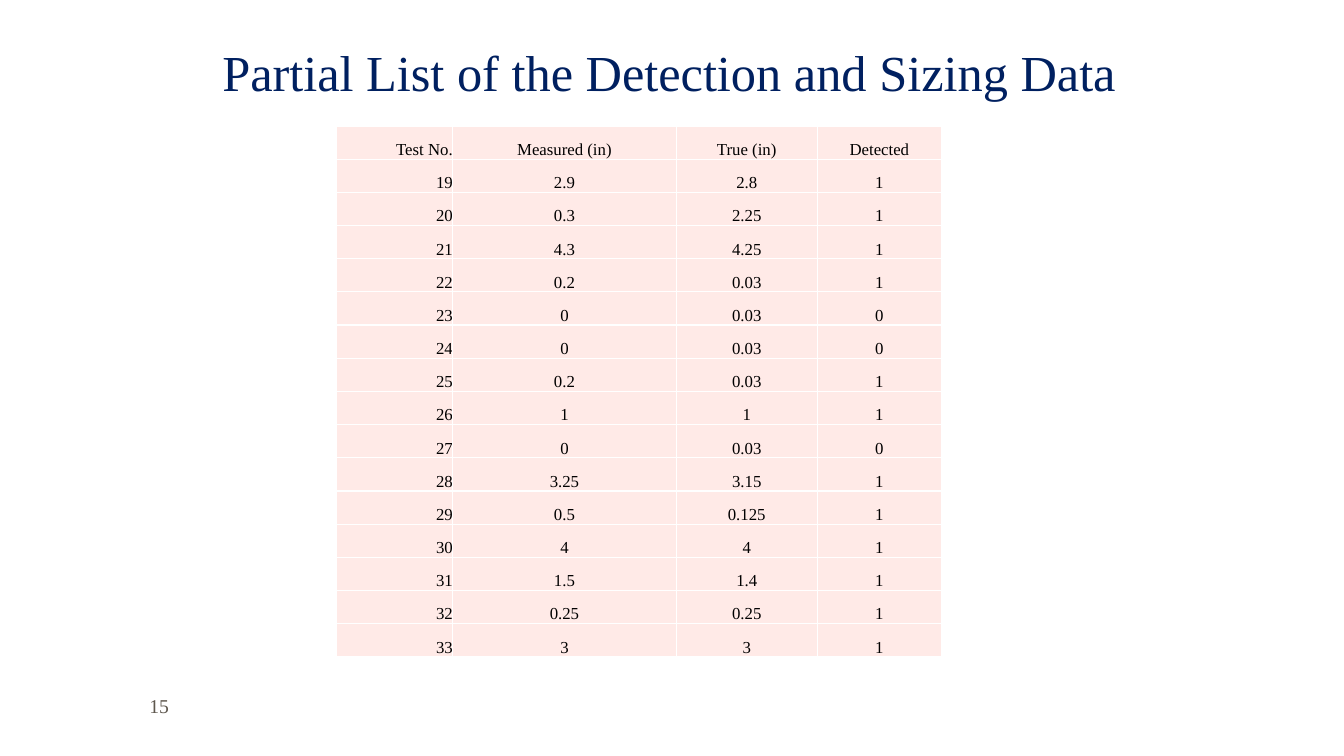
from dataclasses import dataclass

from lxml.etree import SubElement
from pptx import Presentation
from pptx.dml.color import RGBColor
from pptx.enum.text import MSO_ANCHOR as Anchor, PP_ALIGN as Align
from pptx.oxml.ns import qn
from pptx.util import Inches, Length, Pt


@dataclass(frozen=True)
class Theme:
    font: str = "Times New Roman"
    title_size: int = 36
    number_size: int = 14
    cell_size: int = 12
    title_color: str = "002060"
    number_color: str = "5E574E"
    cell_color: str = "000000"
    cell_fill: str = "FFEAE7"
    border_color: str = "FFFFFF"
    border_width: int = 1


@dataclass(frozen=True)
class Label:
    text: str
    left: float
    top: float
    width: float
    height: float
    size: int
    color: str
    align: Align
    anchor: Anchor
    margin_top: float = 0.6


@dataclass(frozen=True)
class Column:
    heading: str
    width: float
    align: Align
    values: tuple


THEME = Theme()
GRID_COLUMNS, GRID_ROWS = 160, 90
TABLE_LEFT, TABLE_TOP, ROW_HEIGHT = 40, 15, 3.95

LABELS = (
    Label("15", 8, 80, 13.3, 6, THEME.number_size, THEME.number_color,
          Align.RIGHT, Anchor.BOTTOM),
    Label("Partial List of the Detection and Sizing Data", 7.7, 3.6, 144, 11.4,
          THEME.title_size, THEME.title_color, Align.CENTER, Anchor.TOP, 1.3),
)

COLUMNS = (
    Column("Test No.", 13.9, Align.RIGHT, tuple(range(19, 34))),
    Column("Measured (in)", 26.6, Align.CENTER,
           (2.9, 0.3, 4.3, 0.2, 0, 0, 0.2, 1, 0, 3.25, 0.5, 4, 1.5, 0.25, 3)),
    Column("True (in)", 16.8, Align.CENTER,
           (2.8, 2.25, 4.25, 0.03, 0.03, 0.03, 0.03, 1, 0.03, 3.15, 0.125, 4, 1.4, 0.25, 3)),
    Column("Detected", 14.8, Align.CENTER,
           (1, 1, 1, 1, 0, 0, 1, 1, 0, 1, 1, 1, 1, 1, 1)),
)


def grid(units: float) -> Length:
    """Turn grid units, twelve to the inch, into a length."""
    return Inches(units / 12)


def write(frame, text: str, size: int, color: str, align: Align) -> None:
    para = frame.paragraphs[0]
    para.text = text
    para.alignment = align
    para.font.name = THEME.font
    para.font.size = Pt(size)
    para.font.color.rgb = RGBColor.from_string(color)


def add_label(page, label: Label) -> None:
    box = page.shapes.add_textbox(grid(label.left), grid(label.top),
                                  grid(label.width), grid(label.height))
    frame = box.text_frame
    frame.word_wrap = True
    frame.vertical_anchor = label.anchor
    frame.margin_top = grid(label.margin_top)
    write(frame, label.text, label.size, label.color, label.align)


def add_borders(cell) -> None:
    """Draw all four cell edges; they must come before the fill in the XML."""
    properties = cell._tc.get_or_add_tcPr()
    for edge in ("a:lnL", "a:lnR", "a:lnT", "a:lnB"):
        line = SubElement(properties, qn(edge), w=str(Pt(THEME.border_width)))
        fill = SubElement(line, qn("a:solidFill"))
        SubElement(fill, qn("a:srgbClr"), val=THEME.border_color)


def style_cell(cell, text: str, align: Align) -> None:
    cell.margin_left = cell.margin_right = cell.margin_top = cell.margin_bottom = 0
    cell.vertical_anchor = Anchor.BOTTOM
    add_borders(cell)
    cell.fill.solid()
    cell.fill.fore_color.rgb = RGBColor.from_string(THEME.cell_fill)
    write(cell.text_frame, text, THEME.cell_size, THEME.cell_color, align)


def add_data_table(page, columns: tuple) -> None:
    row_count = 1 + len(columns[0].values)
    table = page.shapes.add_table(
        row_count, len(columns), grid(TABLE_LEFT), grid(TABLE_TOP),
        grid(sum(column.width for column in columns)),
        grid(row_count * ROW_HEIGHT)).table
    table.first_row = table.horz_banding = False
    for row in table.rows:
        row.height = grid(ROW_HEIGHT)
    for column_index, column in enumerate(columns):
        table.columns[column_index].width = grid(column.width)
        for row_index, value in enumerate((column.heading, *column.values)):
            style_cell(table.cell(row_index, column_index), str(value), column.align)


def main() -> None:
    deck = Presentation()
    deck.slide_width, deck.slide_height = grid(GRID_COLUMNS), grid(GRID_ROWS)
    page = deck.slides.add_slide(deck.slide_layouts[6])
    for label in LABELS:
        add_label(page, label)
    add_data_table(page, COLUMNS)
    deck.save("out.pptx")


if __name__ == "__main__":
    main()
